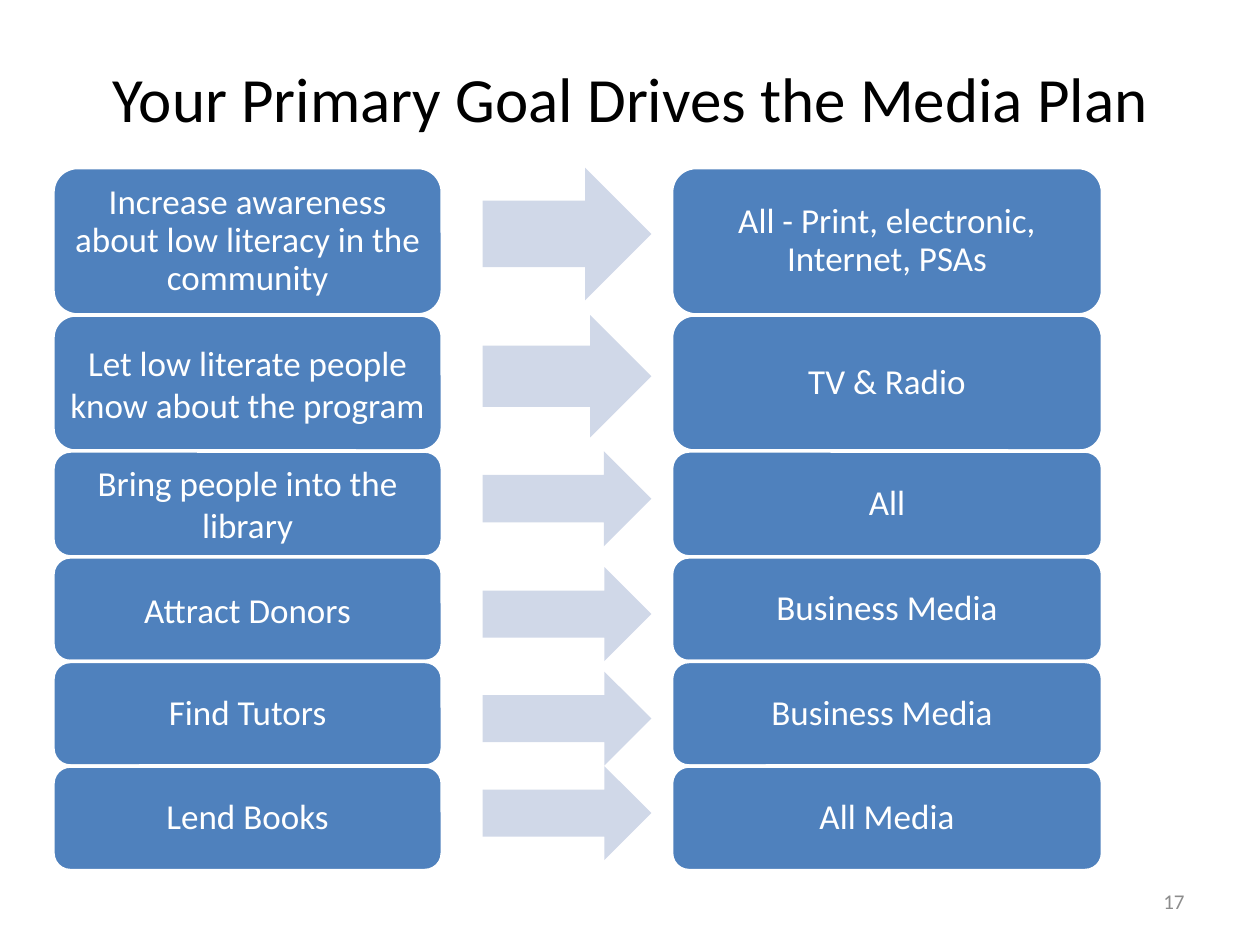
import pptx
import pptx.util
import pptx.dml.color
import pptx.enum.shapes
import pptx.enum.text

Inches = pptx.util.Inches
Pt = pptx.util.Pt
SHAPE = pptx.enum.shapes.MSO_SHAPE
ALIGN = pptx.enum.text.PP_ALIGN

COLORS = {
    "title": "000000",
    "number": "8C8C8C",
    "box": "4F81BD",
    "box_text": "FFFFFF",
    "box_line": "FFFFFF",
    "arrow": "D0D8E8",
}

BOTTOM = 6.91
ROWS = [
    (1.33, "Increase awareness about low literacy in the community", 0.9,
     "All - Print, electronic, Internet, PSAs", 0, 0),
    (2.5, "Let low literate people know about the program", 1.0,
     "TV & Radio", 0, 0),
    (3.58, "Bring people into the library", 1.0, "All", 0, 0),
    (4.42, "Attract Donors", 1.0, "Business Media", 0.08, 0),
    (5.25, "Find Tutors", 0.9, "Business Media", 0.08, 0.08),
    (6.08, "Lend Books", 0.9, "All Media", 0, 0),
]


class Deck:
    font = "Calibri"
    inset = 0.04

    def __init__(self, width, height):
        self.prs = pptx.Presentation()
        self.prs.slide_width = Inches(width)
        self.prs.slide_height = Inches(height)
        self.s = self.prs.slides.add_slide(self.prs.slide_layouts[6])

    def color(self, name):
        return pptx.dml.color.RGBColor.from_string(COLORS[name])

    def fill_text(self, tf, text, size, color, align, spacing=1.0):
        tf.word_wrap = True
        tf.vertical_anchor = pptx.enum.text.MSO_ANCHOR.MIDDLE
        p = tf.paragraphs[0]
        p.alignment = align
        p.line_spacing = spacing
        r = p.add_run()
        r.text = text
        r.font.name = self.font
        r.font.size = Pt(size)
        r.font.color.rgb = self.color(color)

    def text(self, x, y, w, h, text, size, color, align):
        sp = self.s.shapes.add_textbox(Inches(x), Inches(y), Inches(w), Inches(h))
        self.fill_text(sp.text_frame, text, size, color, align)

    def shape(self, kind, x, y, w, h, fill):
        sp = self.s.shapes.add_shape(kind, Inches(x), Inches(y), Inches(w), Inches(h))
        sp.shadow.inherit = False
        sp.fill.solid()
        sp.fill.fore_color.rgb = self.color(fill)
        sp.line.fill.background()
        return sp

    def arrow(self, x, y, w, h):
        self.shape(SHAPE.RIGHT_ARROW, x, y, w, h, "arrow")

    def box(self, x, y, w, h, text, spacing=0.9, extra_right=0):
        sp = self.shape(SHAPE.ROUNDED_RECTANGLE, x, y, w, h, "box")
        sp.line.color.rgb = self.color("box_line")
        sp.line.width = Pt(2)
        tf = sp.text_frame
        tf.margin_left = tf.margin_top = tf.margin_bottom = Inches(self.inset)
        tf.margin_right = Inches(self.inset + extra_right)
        self.fill_text(tf, text, 20, "box_text", ALIGN.CENTER, spacing)


def main():
    deck = Deck(10, 7.5)
    deck.text(0.17, 0.3, 9.67, 0.95, "Your Primary Goal Drives the Media Plan",
              36, "title", ALIGN.CENTER)
    deck.text(7.17, 6.95, 2.33, 0.4, "17", 12, "number", ALIGN.RIGHT)

    ends = [row[0] for row in ROWS[1:]] + [BOTTOM]
    for (top, goal, spacing, media, arrow_drop, extra_right), end in zip(ROWS, ends):
        height = end - top
        deck.arrow(3.83, top + arrow_drop, 1.34, height * 0.9)
        deck.box(0.42, top, 3.09, height, goal, spacing)
        deck.box(5.33, top, 3.42, height, media, extra_right=extra_right)

    deck.prs.save("out.pptx")


if __name__ == "__main__":
    main()
